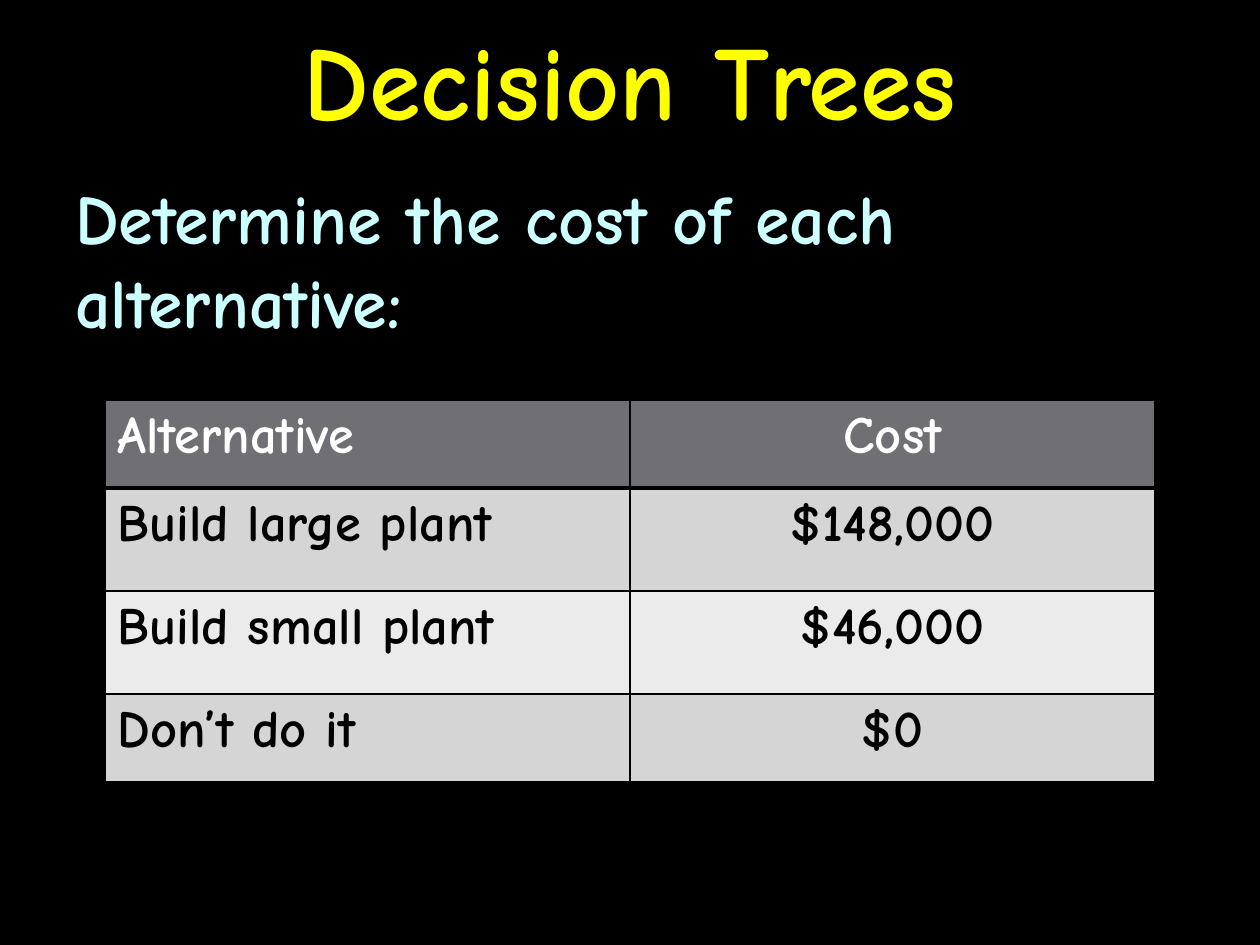
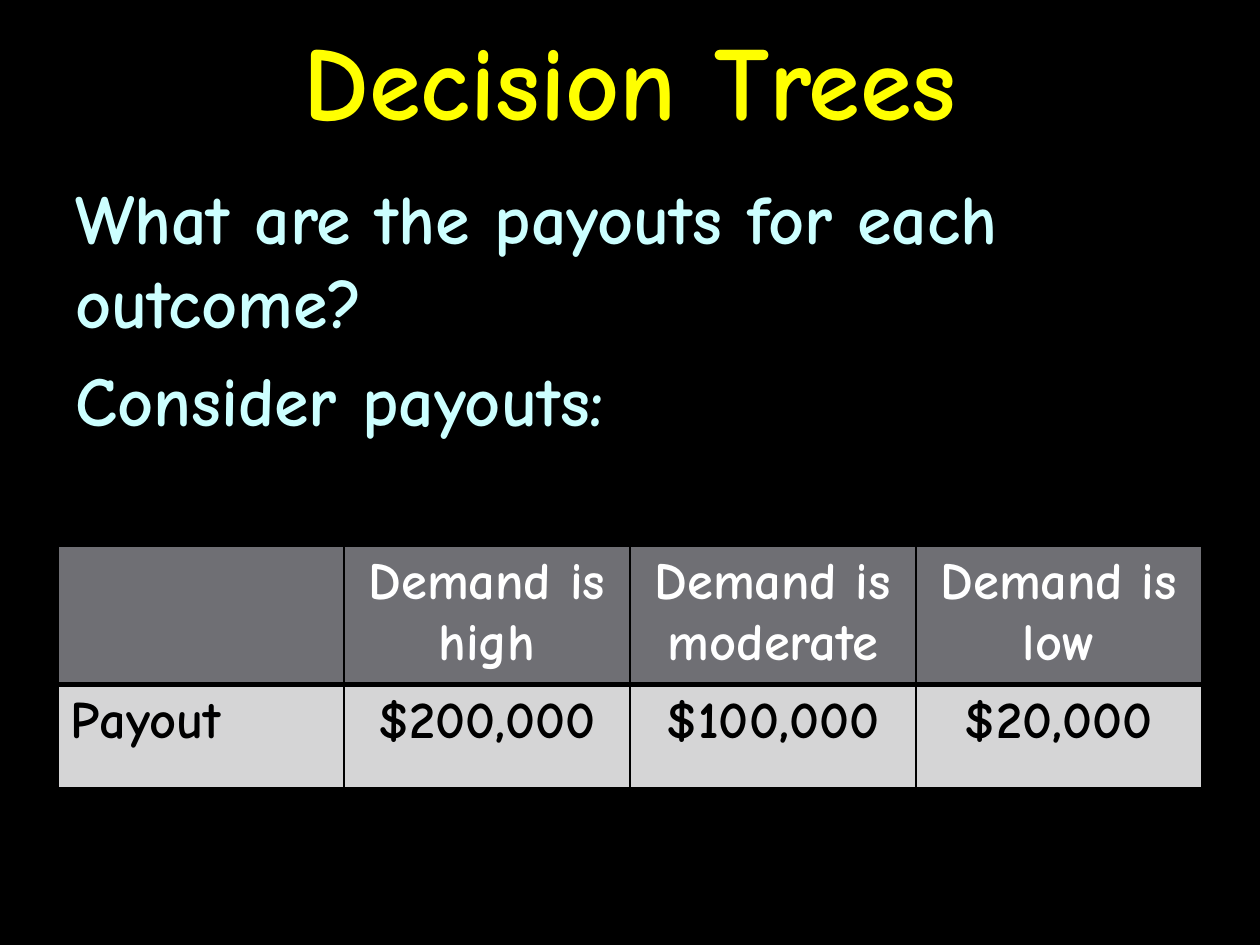
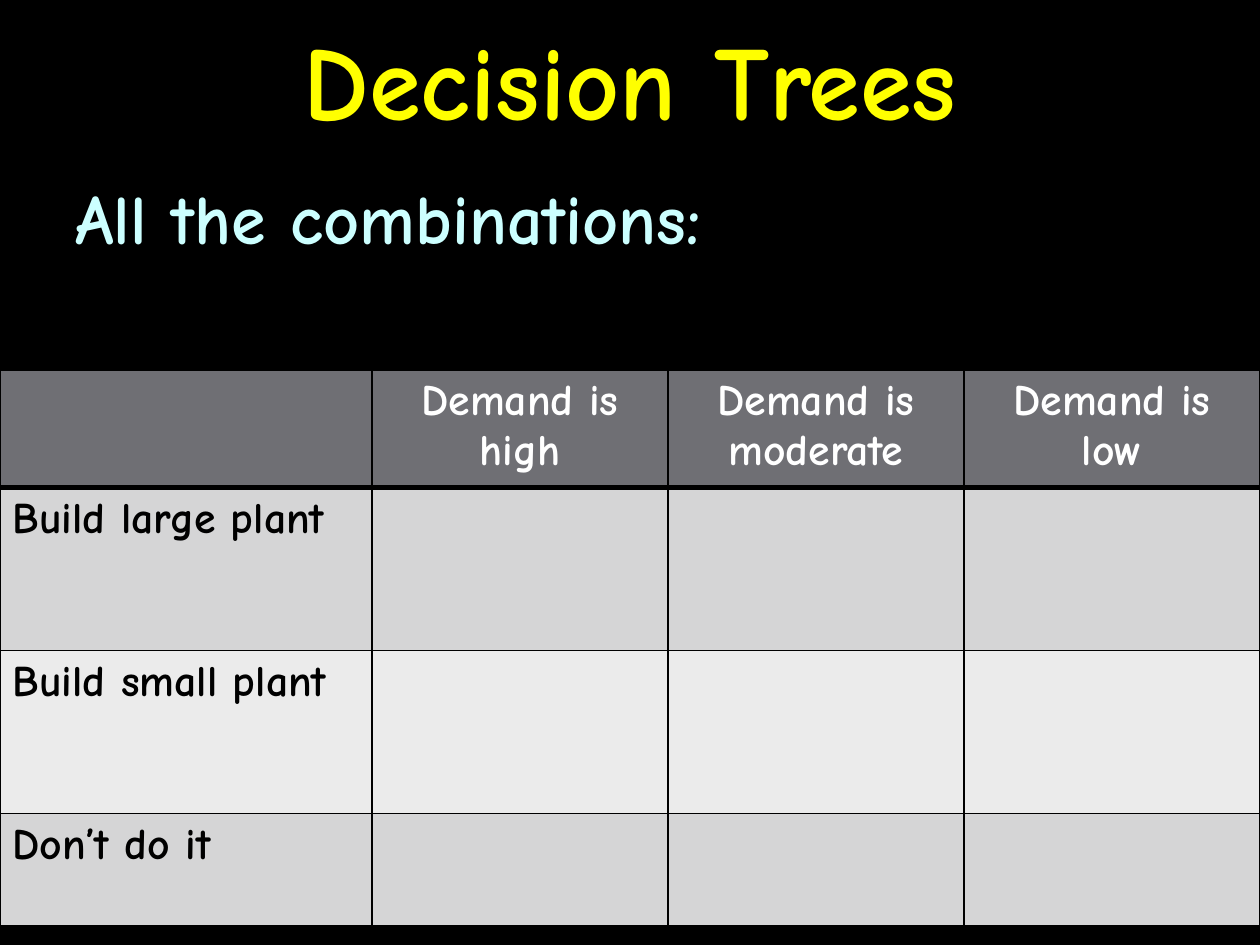
"""Build three decision-tree slides with cost, payout and combination tables."""
from lxml import etree
from pptx import Presentation
from pptx.dml.color import RGBColor
from pptx.enum.text import MSO_ANCHOR, MSO_AUTO_SIZE, PP_ALIGN
from pptx.oxml.ns import qn
from pptx.util import Pt

PX = 914400 / 126
WIDTH, HEIGHT = 1260, 945
TITLE_ONLY = 5
LEFT, CENTER = PP_ALIGN.LEFT, PP_ALIGN.CENTER
MIDDLE = MSO_ANCHOR.MIDDLE
NO_FIT = MSO_AUTO_SIZE.NONE

FONT = "Comic Neue"
BLACK = RGBColor(0x00, 0x00, 0x00)
WHITE = RGBColor(0xFF, 0xFF, 0xFF)
YELLOW = RGBColor(0xFF, 0xFF, 0x00)
PALE_CYAN = RGBColor(0xCC, 0xFF, 0xFF)
HEADER_GREY = RGBColor(0x6F, 0x6F, 0x74)
BANDS = RGBColor(0xD5, 0xD5, 0xD6), RGBColor(0xEB, 0xEB, 0xEB)

DEMANDS = ["Demand is high", "Demand is moderate", "Demand is low"]
LARGE, SMALL, NOTHING = "Build large plant", "Build small plant", "Don’t do it"


def px(n):
    return round(n * PX)


class Deck:
    def __init__(self):
        self.prs = Presentation()
        self.prs.slide_width, self.prs.slide_height = px(WIDTH), px(HEIGHT)
        fill = self.prs.slide_master.background.fill
        fill.solid()
        fill.fore_color.rgb = BLACK

    def style(self, p, size, color, align=LEFT):
        p.alignment = align
        p.font.name, p.font.size, p.font.bold = FONT, Pt(size), True
        p.font.color.rgb = color

    def slide(self, title):
        layout = self.prs.slide_layouts[TITLE_ONLY]
        self.s = self.prs.slides.add_slide(layout)
        sp = self.s.shapes.title
        sp.left, sp.top, sp.width, sp.height = 0, 0, px(WIDTH), px(158)
        tf = sp.text_frame
        tf.text = title
        tf.auto_size, tf.vertical_anchor = NO_FIT, MIDDLE
        p = tf.paragraphs[0]
        p.line_spacing = Pt(72)
        self.style(p, 60, YELLOW, CENTER)

    def body(self, *lines):
        sp = self.s.shapes.add_textbox(px(63), px(168), px(1134), px(777))
        tf = sp.text_frame
        tf.word_wrap = True
        tf.text = "\n".join(lines)
        for i, p in enumerate(tf.paragraphs):
            p.line_spacing = Pt(48)
            p.space_before = Pt(8 if i else 0)
            self.style(p, 40, PALE_CYAN)

    def borders(self, cell, **widths):
        tc_pr = cell._tc.get_or_add_tcPr()
        for side in "LRTB":
            ln = etree.SubElement(tc_pr, qn(f"a:ln{side}"))
            ln.set("w", str(Pt(widths.get(side, 1))))
            fill = etree.SubElement(ln, qn("a:solidFill"))
            etree.SubElement(fill, qn("a:srgbClr")).set("val", str(BLACK))

    def table(self, left, top, cols, heights, rows, size):
        frame = self.s.shapes.add_table(
            len(rows), len(cols), px(left), px(top), px(sum(cols)), px(sum(heights)))
        table = frame.table
        table.first_row = table.horz_banding = False
        for column, width in zip(table.columns, cols):
            column.width = px(width)
        for i, (row, height, texts) in enumerate(zip(table.rows, heights, rows)):
            row.height = px(height)
            for j, (cell, text) in enumerate(zip(row.cells, texts)):
                self.borders(cell, T=3 if i == 1 else 1, B=1 if i else 3)
                cell.fill.solid()
                cell.fill.fore_color.rgb = BANDS[(i - 1) % 2] if i else HEADER_GREY
                if text:
                    cell.text = text
                    self.style(cell.text_frame.paragraphs[0], size,
                               BLACK if i else WHITE, CENTER if j else LEFT)


def main():
    deck = Deck()

    deck.slide("Decision Trees")
    deck.body("Determine the cost of each alternative:")
    costs = [["Alternative", "Cost"], [LARGE, "$148,000"],
             [SMALL, "$46,000"], [NOTHING, "$0"]]
    deck.table(105, 400, [525] * 2, [88, 103, 103, 88], costs, 30)

    deck.slide("Decision Trees")
    deck.body("What are the payouts for each outcome?", "Consider payouts:")
    payouts = [["", *DEMANDS], ["Payout", "$200,000", "$100,000", "$20,000"]]
    deck.table(58, 546, [286] * 4, [133, 103], payouts, 30)

    deck.slide("Decision Trees")
    deck.body("All the combinations:")
    combinations = [["", *DEMANDS]] + [[name, "", "", ""] for name in (LARGE, SMALL, NOTHING)]
    deck.table(0, 370, [372] + [296] * 3, [113, 163, 163, 112], combinations, 25)

    deck.prs.save("out.pptx")


if __name__ == "__main__":
    main()
